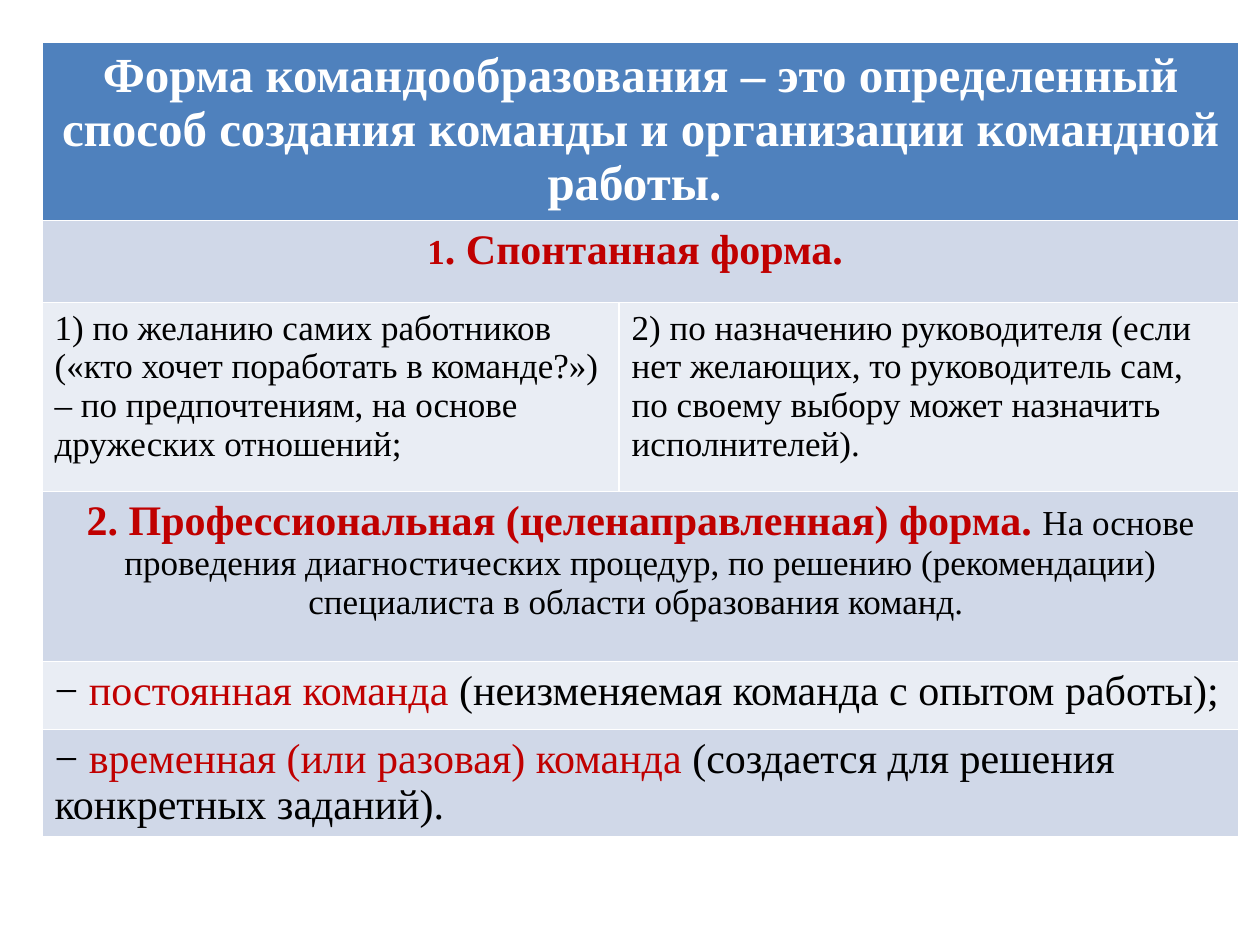
from pptx import Presentation
from pptx.dml.color import RGBColor
from pptx.enum.text import PP_ALIGN
from pptx.util import Pt

LEFT, CENTER = PP_ALIGN.LEFT, PP_ALIGN.CENTER
WHITE = RGBColor(0xFF, 0xFF, 0xFF)
BLACK = RGBColor(0, 0, 0)
RED = RGBColor(0xC0, 0, 0)
BLUE = RGBColor(0x4F, 0x81, 0xBD)
BAND_DARK = RGBColor(0xD0, 0xD8, 0xE8)
BAND_LIGHT = RGBColor(0xE9, 0xED, 0xF4)
FONT = "Times New Roman"

COL_WIDTHS = [329.8, 354.2]
ROW_HEIGHTS = [102, 46.8, 108, 97.2, 38.9, 61.2]

# Each row: alignment, then its cells; a cell is a list of (text, size, colour, bold)
ROWS = [
    (CENTER, [[("Форма командообразования – это определенный способ создания "
                "команды и организации командной работы. ", 28, WHITE, True)]]),
    (CENTER, [[("1", 20, RED, True), (". Спонтанная форма. ", 24, RED, True)]]),
    (LEFT, [[("1) по желанию самих работников («кто хочет поработать в команде?») "
              "– по предпочтениям, на основе дружеских отношений;", 20, BLACK, False)],
            [("2) по назначению руководителя (если нет желающих, то руководитель сам, "
              "по своему выбору может назначить исполнителей).", 20, BLACK, False)]]),
    (CENTER, [[("2. Профессиональная (целенаправленная) форма. ", 24, RED, True),
               ("На основе проведения диагностических процедур, по решению "
                "(рекомендации) специалиста в области образования команд. ",
                20, BLACK, False)]]),
    (LEFT, [[("− ", 24, BLACK, False), ("постоянная команда ", 24, RED, False),
             ("(неизменяемая команда с опытом работы);", 24, BLACK, False)]]),
    (LEFT, [[("− ", 24, BLACK, False),
             ("временная (или разовая) команда ", 24, RED, False),
             ("(создается для решения конкретных заданий).", 24, BLACK, False)]]),
]


def fill_cell(cell, runs, align, fill):
    cell.fill.solid()
    cell.fill.fore_color.rgb = fill
    p = cell.text_frame.paragraphs[0]
    p.alignment = align
    for text, size, color, bold in runs:
        r = p.add_run()
        r.text = text
        r.font.name = FONT
        r.font.size = Pt(size)
        r.font.bold = bold
        r.font.color.rgb = color


def row_fill(i):
    if i == 0:
        return BLUE
    return BAND_DARK if i % 2 else BAND_LIGHT


def add_forms_table(slide):
    # The default table style supplies the white cell borders
    table = slide.shapes.add_table(
        len(ROWS), len(COL_WIDTHS), Pt(24), Pt(24),
        Pt(sum(COL_WIDTHS)), Pt(sum(ROW_HEIGHTS))).table
    for column, width in zip(table.columns, COL_WIDTHS):
        column.width = Pt(width)
    for i, (align, cells) in enumerate(ROWS):
        table.rows[i].height = Pt(ROW_HEIGHTS[i])
        # A row with a single text spans both columns
        if len(cells) == 1:
            table.cell(i, 0).merge(table.cell(i, 1))
        for j, runs in enumerate(cells):
            fill_cell(table.cell(i, j), runs, align, row_fill(i))


def main():
    prs = Presentation()
    prs.slide_width, prs.slide_height = Pt(720), Pt(540)
    slide = prs.slides.add_slide(prs.slide_layouts[6])
    add_forms_table(slide)
    prs.save("out.pptx")


if __name__ == "__main__":
    main()
